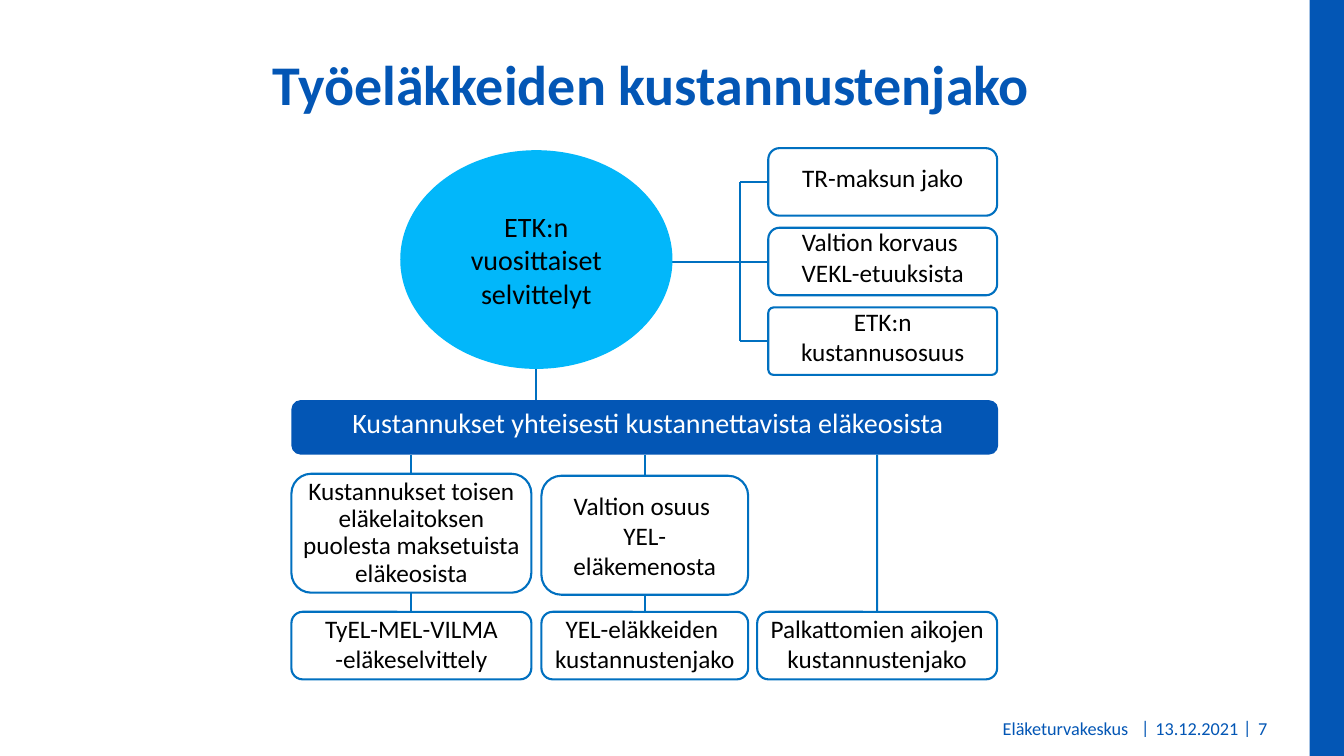
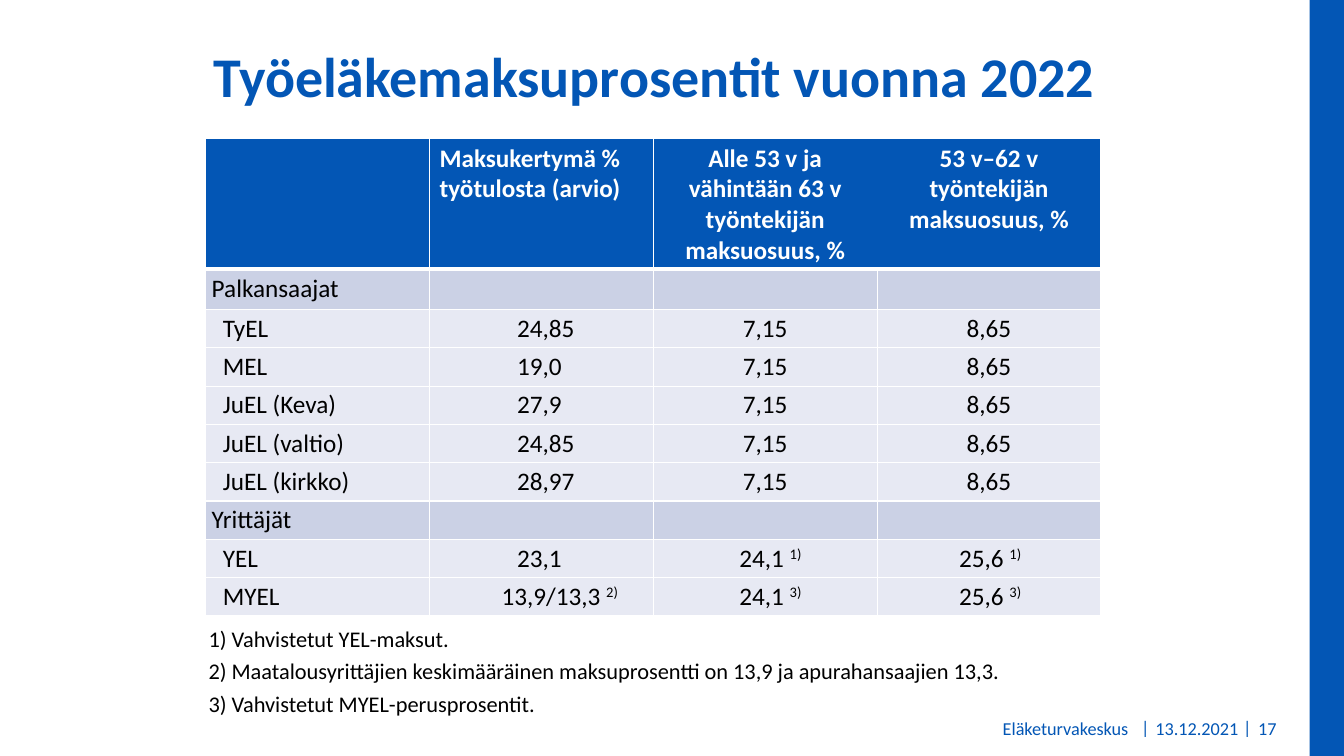
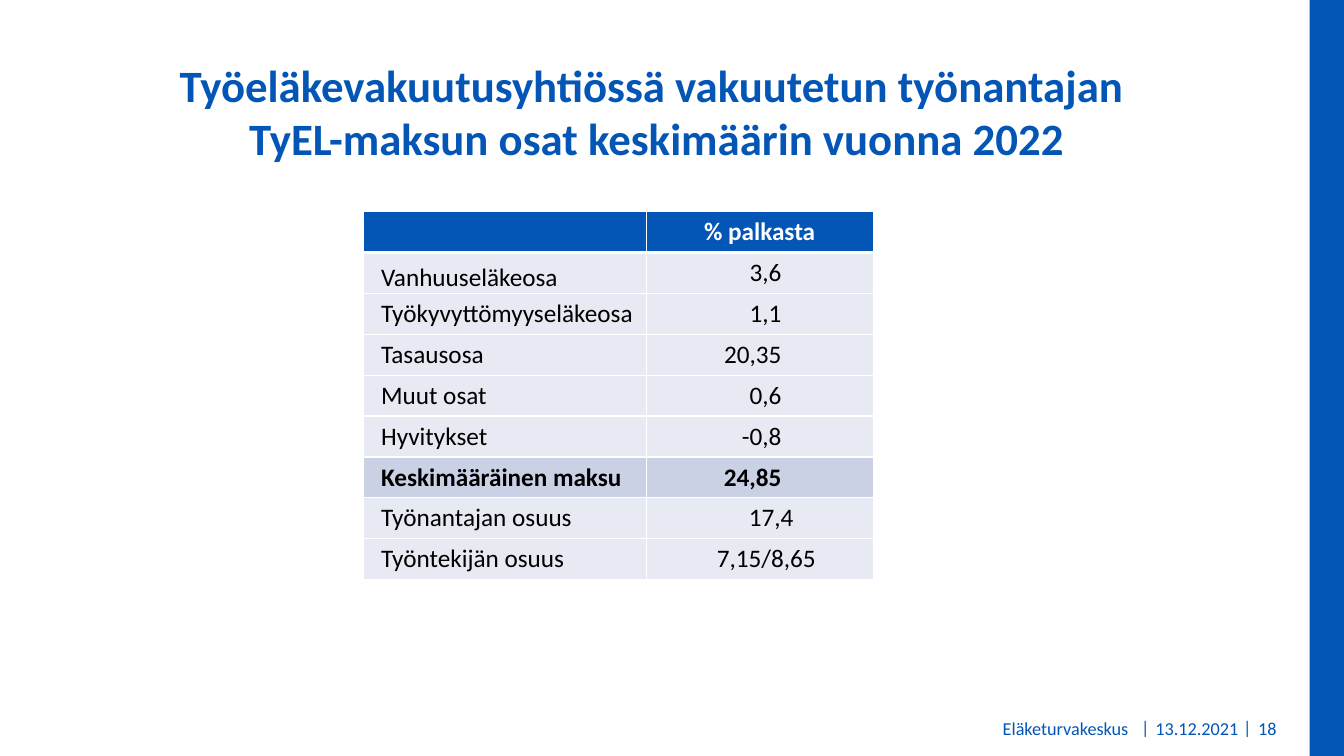
import pptx
import pptx.util
import pptx.dml.color
import pptx.enum.shapes
import pptx.enum.text
import pptx.oxml
import pptx.oxml.ns
from lxml import etree

Inches = pptx.util.Inches
Pt = pptx.util.Pt
RGBColor = pptx.dml.color.RGBColor
SHAPE = pptx.enum.shapes.MSO_SHAPE
ALIGN = pptx.enum.text.PP_ALIGN
ANCHOR = pptx.enum.text.MSO_ANCHOR
qn = pptx.oxml.ns.qn

BLUE = RGBColor(0x03, 0x56, 0xB5)
LINE_BLUE = RGBColor(0x00, 0x70, 0xC0)
SKY = RGBColor(0x02, 0xB7, 0xFA)
WHITE = RGBColor(0xFF, 0xFF, 0xFF)
BLACK = RGBColor(0, 0, 0)
GROUP_ROW = RGBColor(0xCB, 0xD1, 0xE5)
PLAIN_ROW = RGBColor(0xE7, 0xE9, 0xF3)
FONT = "Calibri"
NO_MARGINS = (0, 0, 0, 0)
FOOTER_TOP = 7.05


def write_text(frame, text, size=18, color=BLACK, bold=False, align=ALIGN.LEFT,
               line_spacing=None, superscript=None):
    for index, line in enumerate(text.split("\n")):
        paragraph = frame.add_paragraph() if index else frame.paragraphs[0]
        paragraph.alignment = align
        if line_spacing:
            paragraph.line_spacing = line_spacing
        for part in filter(None, (line, superscript)):
            run = paragraph.add_run()
            run.text = part
            run.font.name = FONT
            run.font.size = Pt(size)
            run.font.bold = bold
            run.font.color.rgb = color
            if part is superscript:
                run._r.get_or_add_rPr().set("baseline", "30000")


def set_margins(holder, margins):
    sides = ("margin_left", "margin_top", "margin_right", "margin_bottom")
    for side, value in zip(sides, margins):
        setattr(holder, side, Inches(value))


def add_label(slide, box, text, margins=(0.1, 0.05, 0.1, 0.05),
              anchor=ANCHOR.TOP, wrap=True, **text_format):
    frame = slide.shapes.add_textbox(*map(Inches, box)).text_frame
    frame.word_wrap = wrap
    frame.vertical_anchor = anchor
    set_margins(frame, margins)
    write_text(frame, text, **text_format)


def add_box(slide, kind, box, fill, text="", outline=None, margins=NO_MARGINS,
            corner=None, **text_format):
    shape = slide.shapes.add_shape(kind, *map(Inches, box))
    shape.shadow.inherit = False
    shape.fill.solid()
    shape.fill.fore_color.rgb = fill
    if outline:
        shape.line.color.rgb = outline
        shape.line.width = Pt(1.5)
    else:
        shape.line.fill.background()
    if corner is not None:
        shape.adjustments[0] = corner
    frame = shape.text_frame
    frame.word_wrap = True
    frame.vertical_anchor = ANCHOR.MIDDLE
    set_margins(frame, margins)
    if text:
        write_text(frame, text, align=ALIGN.CENTER, **text_format)
    return shape


def add_line(slide, start, end, begin=None, finish=None):
    line = slide.shapes.add_connector(
        pptx.enum.shapes.MSO_CONNECTOR.STRAIGHT, *map(Inches, start + end))
    line.line.color.rgb = LINE_BLUE
    line.line.width = Pt(1.5)
    etree.SubElement(line._element.spPr, qn("a:effectLst"))
    if begin:
        line.begin_connect(*begin)
    if finish:
        line.end_connect(*finish)


def add_page(deck, number, title, title_box, title_size=40):
    slide = deck.slides.add_slide(deck.slide_layouts[6])
    add_box(slide, SHAPE.RECTANGLE, (12.99, 0, 0.35, 7.5), BLUE)
    footer = dict(size=13, color=BLUE)
    for left in (11.22, 12.23):
        add_label(slide, (left, 7.06, 0.29, 0.35), "|", wrap=False, **footer)
    for left, width, text, align, margins in (
            (4.87, 6.4, "Eläketurvakeskus", ALIGN.RIGHT, (0.04, 0.05, 0.08, 0.05)),
            (11.39, 0.96, "13.12.2021", ALIGN.CENTER, (0, 0.05, 0, 0.05)),
            (12.38, 0.44, str(number), ALIGN.LEFT, (0.1, 0.05, 0, 0.05))):
        add_label(slide, (left, FOOTER_TOP, width, 0.35), text, margins,
                  ANCHOR.MIDDLE, align=align, **footer)
    add_label(slide, title_box, title, size=title_size, color=BLUE, bold=True,
              align=ALIGN.CENTER)
    return slide


def add_border(cell, side, width):
    edge = etree.SubElement(cell._tc.get_or_add_tcPr(), qn("a:ln" + side),
                            w=str(Pt(width)))
    if width:
        paint = etree.SubElement(edge, qn("a:solidFill"))
        etree.SubElement(paint, qn("a:srgbClr"), val=str(WHITE))
    else:
        etree.SubElement(edge, qn("a:noFill"))


def fill_cell(cell, text, fill, margins=NO_MARGINS, anchor=ANCHOR.MIDDLE,
              borders=None, **text_format):
    for side, width in {**dict.fromkeys("LRTB", 1), **(borders or {})}.items():
        add_border(cell, side, width)
    cell.fill.solid()
    cell.fill.fore_color.rgb = fill
    cell.vertical_anchor = anchor
    set_margins(cell, margins)
    if text:
        write_text(cell.text_frame, text, **text_format)


def add_grid(slide, box, row_count, widths):
    grid = slide.shapes.add_table(row_count, len(widths), *map(Inches, box)).table
    grid.first_row = False
    grid.horz_banding = False
    for column, width in zip(grid.columns, widths):
        column.width = Inches(width)
    return grid


def build_cost_sharing(deck):
    slide = add_page(deck, 7, "Työeläkkeiden kustannustenjako", (0, 0.44, 12.91, 0.94))
    rounded = SHAPE.ROUNDED_RECTANGLE
    trunk, side_left, side_top, side_step, box_height = 7.34, 7.62, 1.47, 0.79, 0.67
    bar_top, bar_bottom, last_top = 3.97, 4.51, 6.07

    side_texts = ("TR-maksun jako", "Valtion korvaus \nVEKL-etuuksista",
                  "ETK:n kustannusosuus")
    side_middles = []
    for index, text in enumerate(side_texts):
        top = side_top + index * side_step
        middle = top + box_height / 2
        side_middles.append(middle)
        side_box = add_box(slide, rounded, (side_left, top, 2.27, box_height), WHITE,
                           text, LINE_BLUE, (0, 0, 0, 0.09),
                           corner=0.08 if index == 2 else None)
        start = 6.66 if index == 1 else trunk
        add_line(slide, (start, middle), (side_left, middle), finish=(side_box, 1))
    add_line(slide, (trunk, side_middles[0]), (trunk, side_middles[-1]))

    add_line(slide, (5.32, 3.66), (5.32, bar_top))
    add_box(slide, SHAPE.OVAL, (3.97, 1.49, 2.7, 2.17), SKY,
            "ETK:n vuosittaiset selvittelyt", margins=(0.1, 0.05, 0.1, 0.05), size=20)
    add_box(slide, rounded, (2.89, bar_top, 7.01, bar_bottom - bar_top), BLUE,
            "Kustannukset yhteisesti kustannettavista eläkeosista",
            margins=(0.16, 0, 0.1, 0.1), size=20, color=WHITE)

    branches = (
        (2.89, 2.38, 4.7, "Kustannukset toisen eläkelaitoksen puolesta "
         "maksetuista eläkeosista", 0.9, "TyEL-MEL-VILMA\n-eläkeselvittely"),
        (5.37, 2.05, 4.72, "Valtion osuus \nYEL-\neläkemenosta", None,
         "YEL-eläkkeiden \nkustannustenjako"),
        (7.51, 2.38, None, None, None, "Palkattomien aikojen\nkustannustenjako"))
    for left, width, share_top, share, spacing, result in branches:
        center = left + width / 2
        start, begin = (center, bar_bottom), None
        result_box = add_box(slide, rounded, (left, last_top, width, box_height),
                             WHITE, result, LINE_BLUE, (0, 0, 0, 0.04))
        if share:
            share_box = add_box(slide, rounded, (left, share_top, width, 1.18), WHITE,
                                share, LINE_BLUE, line_spacing=spacing)
            add_line(slide, start, (center, share_top), finish=(share_box, 0))
            start, begin = (center, share_top + 1.18), (share_box, 2)
        add_line(slide, start, (center, last_top), begin, (result_box, 0))


def build_contribution_rates(deck):
    slide = add_page(deck, 17, "Työeläkemaksuprosentit vuonna 2022",
                     (0, 0.36, 12.97, 0.71))
    add_label(slide, (1.97, 6.1, 9.03, 1.05),
              "1) Vahvistetut YEL-maksut.\n"
              "2) Maatalousyrittäjien keskimääräinen maksuprosentti on 13,9 "
              "ja apurahansaajien 13,3.\n"
              "3) Vahvistetut MYEL-perusprosentit.", size=16, line_spacing=1.2)

    headings = ("", "Maksukertymä % työtulosta (arvio)",
                "Alle 53 v ja vähintään 63 v työntekijän maksuosuus, %",
                "53 v–62 v työntekijän maksuosuus, %")
    rates = (
        ("Palkansaajat",),
        ("TyEL", "24,85", "7,15", "8,65"),
        ("MEL", "19,0", "7,15", "8,65"),
        ("JuEL (Keva)", "27,9", "7,15", "8,65"),
        ("JuEL (valtio)", "24,85", "7,15", "8,65"),
        ("JuEL (kirkko)", "28,97", "7,15", "8,65"),
        ("Yrittäjät",),
        ("YEL", "23,1", ("24,1 ", "1)"), ("25,6 ", "1)")),
        ("MYEL", ("13,9/13,3 ", "2)"), ("24,1 ", "3)"), ("25,6 ", "3)")))
    note_margins = (0, 0.35, 0.75, 0.79)

    grid = add_grid(slide, (2.04, 1.37, 8.89, 4.75), len(rates) + 1, [2.22] * 4)
    for row, height in zip(grid.rows, [1.28, 0.4] + [0.38] * 8):
        row.height = Inches(height)
    heading_borders = ({"B": 3}, {"B": 3}, {"B": 3, "R": 0}, {"B": 3, "L": 0})
    for column, heading in enumerate(headings):
        fill_cell(grid.cell(0, column), heading, BLUE, (0.1, 0.05, 0.1, 0.05),
                  ANCHOR.TOP, heading_borders[column], color=WHITE, bold=True,
                  align=ALIGN.CENTER if column > 1 else ALIGN.LEFT)
    for row, (name, *values) in enumerate(rates, 1):
        fill = PLAIN_ROW if values else GROUP_ROW
        top_border = {"T": 3} if row == 1 else None
        fill_cell(grid.cell(row, 0), name, fill, (0.17 if values else 0.06, 0, 0, 0),
                  borders=top_border)
        for column, value in enumerate(values or [""] * 3, 1):
            note, margins, align = None, NO_MARGINS, ALIGN.CENTER
            if isinstance(value, tuple):
                value, note = value
                margins, align = (0, 0, note_margins[column], 0), ALIGN.RIGHT
            elif column == 1:
                margins, align = (0.87, 0, 0, 0), ALIGN.LEFT
            fill_cell(grid.cell(row, column), value, fill, margins,
                      borders=top_border, align=align, superscript=note)


def build_contribution_parts(deck):
    slide = add_page(deck, 18, "Työeläkevakuutusyhtiössä vakuutetun työnantajan \n"
                     "TyEL-maksun osat keskimäärin vuonna 2022",
                     (0.03, 0.52, 12.97, 1.46), 32)
    parts = (
        ("Vanhuuseläkeosa", "3,6", 0.91),
        ("Työkyvyttömyyseläkeosa", "1,1", 0.91),
        ("Tasausosa", "20,35", 0.91),
        ("Muut osat", "0,6", 0.91),
        ("Hyvitykset", "-0,8", 0.91),
        ("Keskimääräinen maksu", "24,85", 0.91),
        ("Työnantajan osuus", "17,4", 0.79),
        ("Työntekijän osuus", "7,15/8,65", 0.57))
    average_row = 6

    grid = add_grid(slide, (3.6, 2.1, 5.06, 3.65), len(parts) + 1, (2.81, 2.25))
    for column, heading in enumerate(("", "% palkasta")):
        fill_cell(grid.cell(0, column), heading, BLUE, (0.04, 0.05, 0.04, 0.05),
                  borders={"B": 3}, color=WHITE, bold=True, align=ALIGN.CENTER)
    for row, (name, share, right) in enumerate(parts, 1):
        average = row == average_row
        style = dict(fill=GROUP_ROW if average else PLAIN_ROW, bold=average,
                     borders={"T": 3} if row == 1 else None)
        fill_cell(grid.cell(row, 0), name, margins=(0.18, 0, 0, 0),
                  anchor=ANCHOR.BOTTOM if row == 1 else ANCHOR.MIDDLE, **style)
        fill_cell(grid.cell(row, 1), share, margins=(0, 0, right, 0),
                  align=ALIGN.RIGHT, **style)


def main():
    deck = pptx.Presentation()
    deck.slide_width, deck.slide_height = Inches(13.33), Inches(7.5)
    build_cost_sharing(deck)
    build_contribution_rates(deck)
    build_contribution_parts(deck)
    deck.save("out.pptx")


if __name__ == "__main__":
    main()
